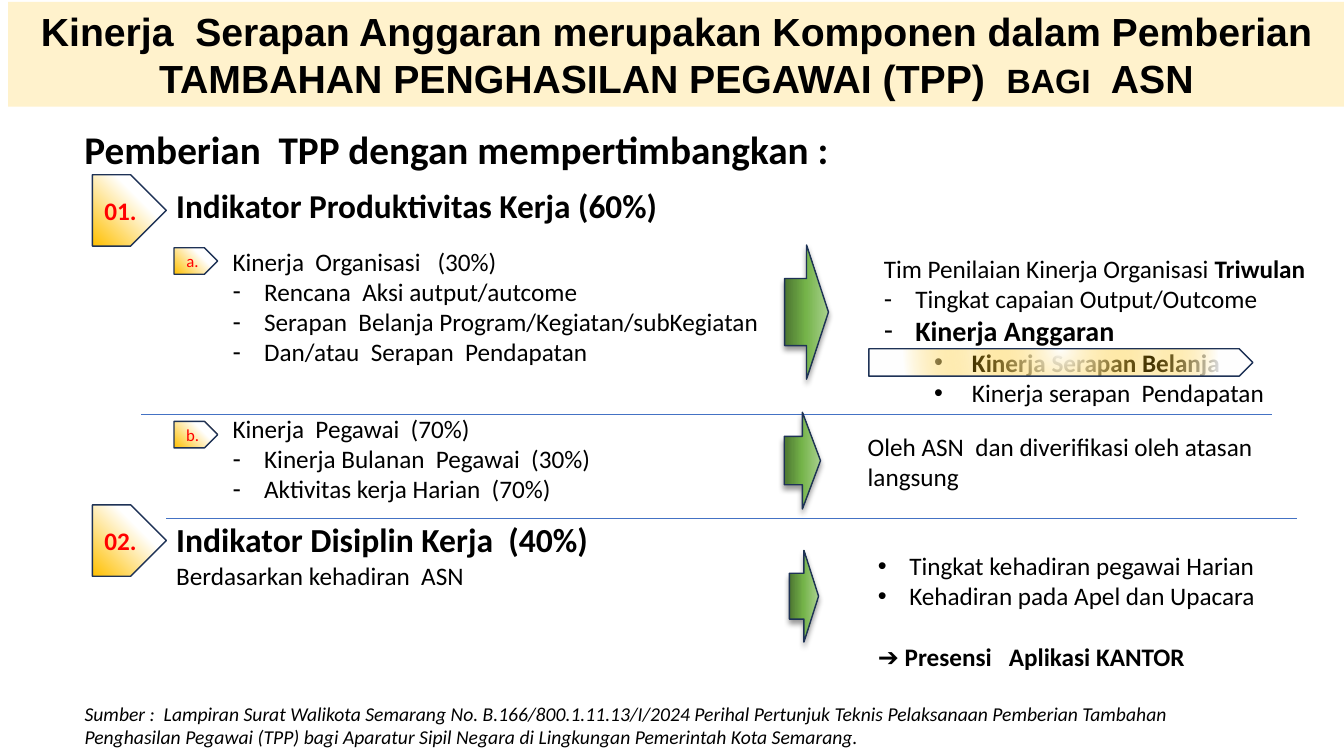
from lxml import etree
from pptx import Presentation
from pptx.dml.color import RGBColor
from pptx.enum import shapes, text
from pptx.oxml import ns
from pptx.util import Pt

COLORS = {
    "black": "000000", "red": "FF0000", "navy": "1E3256", "blue": "4472C4",
    "cream": "FFF2CC", "white": "FFFFFF", "gold": "FFC000",
    "green1": "4B7430", "green2": "60943D", "green3": "74B349", "green4": "A9D18E",
}
# Gradient stops: position %, colour, opacity %
GOLD_STOPS = [(0, "white", 100), (35, "white", 100), (100, "gold", 100)]
GREEN_STOPS = [(0, "green1", 100), (24, "green2", 100), (48, "green3", 100), (100, "green4", 100)]
GLOW_STOPS = [(0, "white", 100), (47, "gold", 25), (82, "white", 84)]
TOP_RIGHT = (100, 0, 0, 100)
CENTER = (50, -80, 50, 180)

DASH = ("-", 22.5, -22.5)
DOT = ("•", 22.5, -22.5)
SUB_DOT = ("•", 63, -27)


def rgb(name):
    return RGBColor.from_string(COLORS[name])


def add_xml(parent, tag, **attributes):
    element = etree.SubElement(parent, ns.qn(tag))
    for name, value in attributes.items():
        element.set(name, str(value))
    return element


def add_color(parent, name, opacity):
    color = add_xml(parent, "a:srgbClr", val=COLORS[name])
    if opacity < 100:
        add_xml(color, "a:alpha", val=opacity * 1000)


def fill_gradient(shape, stops, focus=None):
    """Radial around the focus rectangle, or left to right without one."""
    gradient = add_xml(shape._element.spPr, "a:gradFill", rotWithShape=1)
    stop_list = add_xml(gradient, "a:gsLst")
    for position, name, opacity in stops:
        add_color(add_xml(stop_list, "a:gs", pos=position * 1000), name, opacity)
    if focus:
        radial = add_xml(gradient, "a:path", path="circle")
        add_xml(radial, "a:fillToRect", **{side: value * 1000 for side, value in zip("ltrb", focus)})
    else:
        add_xml(gradient, "a:lin", ang=0, scaled=0)


def add_gradient_shape(slide, kind, place, stops, focus=None):
    shape = slide.shapes.add_shape(kind, *map(Pt, place))
    fill_gradient(shape, stops, focus)
    shape.line.color.rgb = rgb("navy")
    shape.line.width = Pt(1)
    shape.shadow.inherit = False
    return shape


def set_bullet(para, bullet):
    mark, margin, indent = bullet
    properties = para._p.get_or_add_pPr()
    properties.set("marL", str(Pt(margin)))
    properties.set("indent", str(Pt(indent)))
    add_xml(properties, "a:buFont", typeface="Arial")
    add_xml(properties, "a:buChar", char=mark)


def style(para, size, bold=False, italic=False, color="black", font="Calibri"):
    for span in para.runs:
        span.font.size = Pt(size)
        span.font.bold = bold
        span.font.italic = italic
        span.font.color.rgb = rgb(color)
        span.font.name = font


def add_text(slide, place, lines, size=18, wrap=True, **look):
    """Each line is (words, bullet or None)."""
    box = slide.shapes.add_textbox(*map(Pt, place))
    frame = box.text_frame
    frame.word_wrap = wrap
    frame.text = "\n".join(words for words, _ in lines)
    for para, (_, bullet) in zip(frame.paragraphs, lines):
        if bullet:
            set_bullet(para, bullet)
        style(para, size, **look)
    return frame.paragraphs


def add_heading(slide, place, words, size, spacing=0.9):
    para = add_text(slide, place, [(words, None)], size, bold=True)[0]
    para.line_spacing = spacing
    para.space_before = Pt(10)


def add_tag(slide, place, label, size, bold):
    tag = add_gradient_shape(slide, shapes.MSO_SHAPE.PENTAGON, place, GOLD_STOPS, TOP_RIGHT)
    frame = tag.text_frame
    frame.text = label
    frame.vertical_anchor = text.MSO_ANCHOR.MIDDLE
    frame.paragraphs[0].alignment = text.PP_ALIGN.CENTER
    style(frame.paragraphs[0], size, bold, color="red")


def add_arrow(slide, place):
    arrow = add_gradient_shape(slide, shapes.MSO_SHAPE.RIGHT_ARROW, place, GREEN_STOPS)
    effects = arrow._element.spPr.find(ns.qn("a:effectLst"))
    shadow = add_xml(effects, "a:outerShdw", blurRad=Pt(4), dist=Pt(3), dir=5400000,
                     algn="t", rotWithShape=0)
    add_color(shadow, "black", 40)


def add_divider(slide, left, top, width=808):
    line = slide.shapes.add_connector(shapes.MSO_CONNECTOR.STRAIGHT,
                                      Pt(left), Pt(top), Pt(left + width), Pt(top))
    line.line.color.rgb = rgb("blue")
    line.line.width = Pt(0.5)
    add_xml(line._element.spPr, "a:effectLst")


def add_title(slide):
    banner = slide.shapes.add_shape(shapes.MSO_SHAPE.RECTANGLE, Pt(5.8), Pt(1.4), Pt(954.7), Pt(74.9))
    banner.fill.solid()
    banner.fill.fore_color.rgb = rgb("cream")
    banner.line.fill.background()
    banner.shadow.inherit = False
    frame = banner.text_frame
    frame.vertical_anchor = text.MSO_ANCHOR.TOP
    para = frame.paragraphs[0]
    para.alignment = text.PP_ALIGN.CENTER
    for words in ("Kinerja  Serapan Anggaran merupakan Komponen dalam Pemberian "
                  "TAMBAHAN PENGHASILAN PEGAWAI (TPP)  ", "BAGI", "  ASN"):
        para.add_run().text = words
    style(para, 28, bold=True, font="Arial")
    para.runs[1].font.size = Pt(24)


def add_left_side(slide):
    add_heading(slide, (118.8, 134.6, 371.5, 51.1), "Indikator Produktivitas Kerja (60%)", 23.8, 0.8)
    add_heading(slide, (118.8, 370.1, 396.7, 51.1), "Indikator Disiplin Kerja  (40%)", 24)
    for label, top in (("01.", 124.8), ("02.", 360.6)):
        add_tag(slide, (66, top, 52.8, 51), label, 18, True)
    for label, top in (("a.", 177), ("b.", 301)):
        add_tag(slide, (124.3, top, 31.2, 18.9), label, 12, False)
    add_text(slide, (159.1, 172.1, 398.2, 94.3), [
        ("Kinerja  Organisasi   (30%)", None),
        ("Rencana  Aksi autput/autcome", DASH),
        ("Serapan  Belanja Program/Kegiatan/subKegiatan", DASH),
        ("Dan/atau  Serapan  Pendapatan", DASH)], wrap=False)
    add_text(slide, (159.1, 291.6, 272.9, 72.7), [
        ("Kinerja  Pegawai  (70%)", None),
        ("Kinerja Bulanan  Pegawai  (30%)", DASH),
        ("Aktivitas kerja Harian  (70%)", DASH)], wrap=False)
    add_text(slide, (118.8, 396.7, 254.9, 28.8), [("Berdasarkan kehadiran  ASN", None)])


def add_right_side(slide):
    attendance = add_text(slide, (619.9, 389.5, 287.3, 94.3), [
        ("Tingkat kehadiran pegawai Harian", DOT),
        ("Kehadiran pada Apel dan Upacara", DOT),
        ("➔ Presensi   Aplikasi KANTOR", None)], wrap=False)
    attendance[2].space_before = Pt(22)
    style(attendance[2], 18, bold=True)

    review = add_text(slide, (624.2, 177.1, 322.6, 118.8), [
        ("Tim Penilaian Kinerja Organisasi ", None),
        ("Tingkat capaian Output/Outcome", DASH),
        ("Kinerja Anggaran", DASH),
        ("Kinerja Serapan Belanja", SUB_DOT),
        ("Kinerja serapan  Pendapatan", SUB_DOT)], wrap=False)
    review[0].add_run().text = "Triwulan"
    style(review[0], 18)
    review[0].runs[1].font.bold = True
    style(review[2], 20, bold=True)
    style(review[3], 18, bold=True)
    for para in review[3:]:
        para.level = 1

    add_text(slide, (612.7, 304.6, 295.9, 51.1),
             [("Oleh ASN  dan diverifikasi oleh atasan langsung", None)])
    add_gradient_shape(slide, shapes.MSO_SHAPE.PENTAGON, (620.6, 249.1, 274.3, 19.6), GLOW_STOPS, CENTER)


def main():
    deck = Presentation()
    deck.slide_width, deck.slide_height = Pt(960), Pt(540)
    slide = deck.slides.add_slide(deck.slide_layouts[6])
    add_heading(slide, (53.3, 90, 828, 51.1), "Pemberian  TPP dengan mempertimbangkan :", 28)
    add_title(slide)
    add_left_side(slide)
    add_divider(slide, 100.8, 295.9)
    add_divider(slide, 118.8, 370.1)
    for place in ((560.5, 175, 31.3, 95.8), (560.2, 294.5, 25.9, 69.1), (563.8, 393.1, 20.9, 65.5)):
        add_arrow(slide, place)
    add_right_side(slide)
    add_text(slide, (53.3, 497.5, 846, 41), [(
        "Sumber :  Lampiran Surat Walikota Semarang No. B.166/800.1.11.13/I/2024 Perihal "
        "Pertunjuk Teknis Pelaksanaan Pemberian Tambahan Penghasilan Pegawai (TPP) bagi "
        "Aparatur Sipil Negara di Lingkungan Pemerintah Kota Semarang.", None)], 14, italic=True)
    deck.save("out.pptx")


if __name__ == "__main__":
    main()
